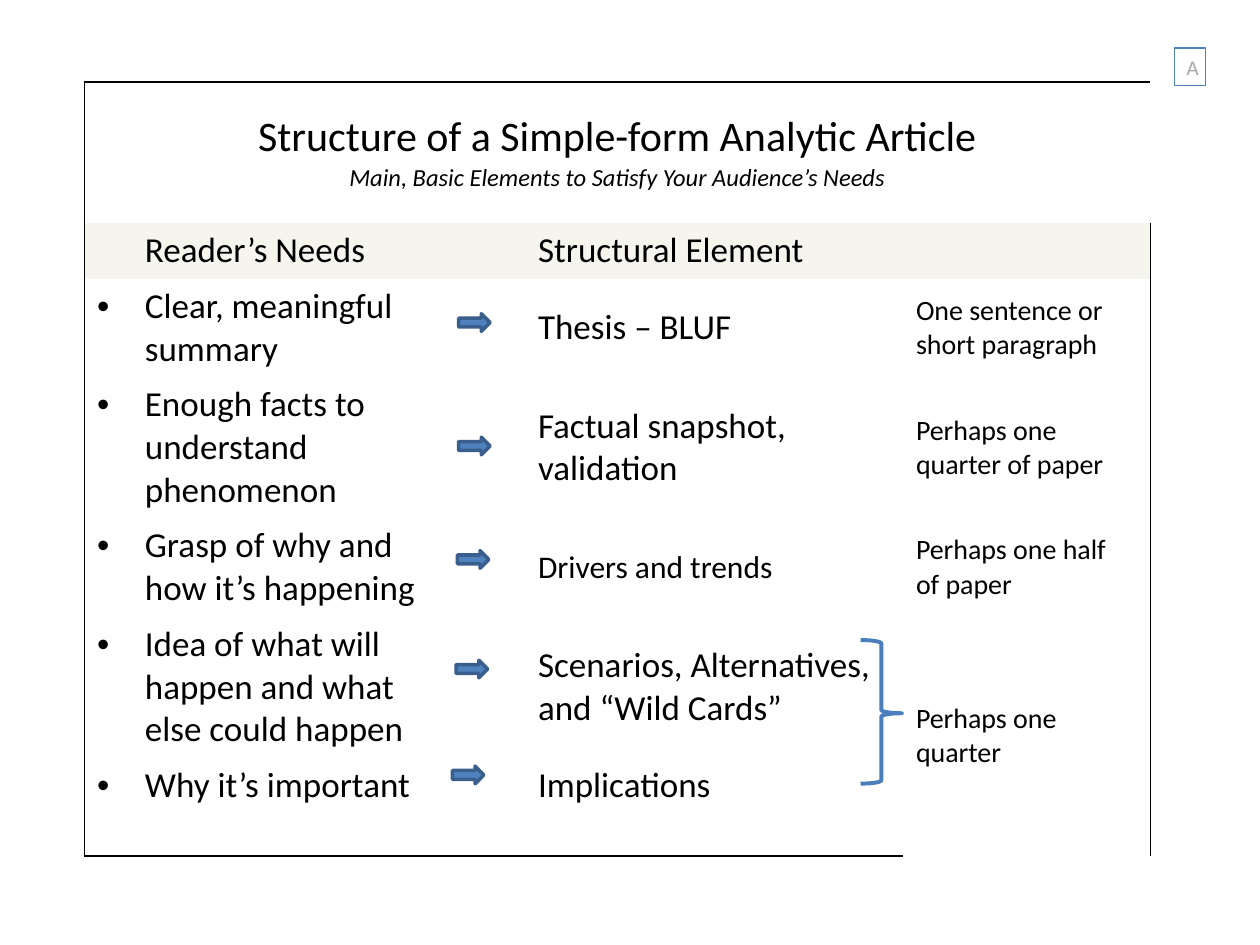
"""Build a slide that matches a reader's needs with the elements of an analytic article."""
from dataclasses import dataclass

from lxml import etree
from pptx import Presentation
from pptx import util as u
from pptx.dml.color import RGBColor
from pptx.enum import shapes, text
from pptx.oxml.ns import qn

HUES = {"ink": "000000", "band": "F5F4ED", "blue": "4F81BD", "edge": "3A5F8C",
        "brace": "4B7EBC", "grey": "A6A6A6"}
FONT = "Calibri"
WIDE, HIGH = u.Inches(10), u.Inches(7.5)
COLS = (2.75, 0.75, 3, 1.96)
LINE, PAD, HEAD = 0.34, 0.1, 1.12
STYLE = "{2D5ABB26-0587-4C30-8999-92F81FD0307C}"


@dataclass(frozen=True)
class Box:
    """Place and size in percent of the slide."""
    left: float
    top: float
    wide: float
    high: float

    def emu(self) -> tuple[int, ...]:
        return (int(WIDE * self.left / 100), int(HIGH * self.top / 100),
                int(WIDE * self.wide / 100), int(HIGH * self.high / 100))


@dataclass(frozen=True)
class Row:
    """One need, the element that meets it, and its share of the paper."""
    need: str
    item: str
    share: str
    lines: int
    size: int = 20


ROWS = (
    Row("Clear, meaningful summary", "Thesis – BLUF", "One sentence or short paragraph", 2),
    Row("Enough facts to understand phenomenon", "Factual snapshot, validation",
        "Perhaps one quarter of paper", 3),
    Row("Grasp of why and how it’s happening", "Drivers and trends",
        "Perhaps one half\vof paper", 2, 18),
    Row("Idea of what will happen and what else could happen",
        "Scenarios, Alternatives, and “Wild Cards”", "Perhaps one quarter", 3),
    Row("Why it’s important", "Implications", "", 2),
)
ARROWS = ((36.4, 33.2), (36.4, 46.27), (36.3, 58.27), (36.2, 69.87), (35.9, 81.07))


def hue(name: str) -> RGBColor:
    return RGBColor.from_string(HUES[name])


def style(para, size: float, color: str = "ink", italic: bool = False) -> None:
    font = para.font
    font.name, font.size, font.italic = FONT, u.Pt(size), italic
    font.color.rgb = hue(color)


def write(cell, words: str, size: float, top: bool = False):
    cell.vertical_anchor = text.MSO_ANCHOR.TOP if top else text.MSO_ANCHOR.MIDDLE
    para = cell.text_frame.paragraphs[0]
    para.text = words
    style(para, size)
    return para


def indent(para, bullet: bool) -> None:
    props = para._p.get_or_add_pPr()
    props.set("marL", str(u.Inches(0.38)))
    if bullet:
        props.set("indent", str(-u.Inches(0.38)))
        font = etree.Element(qn("a:buFont"), typeface="Arial")
        mark = etree.Element(qn("a:buChar"), char="•")
        props.insert(0, font)
        props.insert(1, mark)


def border(cell, sides: str) -> None:
    props = cell._tc.get_or_add_tcPr()
    for spot, side in enumerate(sides):
        line = etree.Element(qn(f"a:ln{side}"), w=str(u.Pt(1)))
        fill = etree.SubElement(line, qn("a:solidFill"))
        etree.SubElement(fill, qn("a:srgbClr"), val=HUES["ink"])
        props.insert(spot, line)


def frame(table) -> None:
    last, end = len(table.rows) - 1, len(COLS) - 1
    for y in range(last + 1):
        for x in range(end + 1):
            cell = table.cell(y, x)
            if y == 1:
                cell.fill.solid()
                cell.fill.fore_color.rgb = hue("band")
            else:
                cell.fill.background()
            tests = (("L", x == 0), ("R", x == end), ("T", y == 0), ("B", y == last))
            border(cell, "".join(side for side, hit in tests if hit))


def grid(slide) -> None:
    highs = [HEAD, LINE + PAD] + [row.lines * LINE + PAD for row in ROWS]
    spot = Box(6.7, 8.67, sum(COLS) * 10, sum(highs) / 0.075)
    table = slide.shapes.add_table(len(highs), len(COLS), *spot.emu()).table
    table.first_row = table.horz_banding = False
    table._tbl.tblPr.find(qn("a:tableStyleId")).text = STYLE
    for col, wide in zip(table.columns, COLS):
        col.width = u.Inches(wide)
    for row, high in zip(table.rows, highs):
        row.height = u.Inches(high)
    frame(table)
    table.cell(0, 0).merge(table.cell(0, 3))
    table.cell(5, 3).merge(table.cell(6, 3))

    title = table.cell(0, 0)
    main = write(title, "Structure of a Simple-form Analytic Article", 24)
    sub = title.text_frame.add_paragraph()
    sub.text = "Main, Basic Elements to Satisfy Your Audience’s Needs"
    style(sub, 14, italic=True)
    main.alignment = sub.alignment = text.PP_ALIGN.CENTER

    indent(write(table.cell(1, 0), "Reader’s Needs", 20), False)
    write(table.cell(1, 2), "Structural Element", 20)
    for y, row in enumerate(ROWS, 2):
        low = y == len(highs) - 1
        indent(write(table.cell(y, 0), row.need, 20, low), True)
        write(table.cell(y, 2), row.item, row.size, low)
        if row.share:
            write(table.cell(y, 3), row.share, 16)


def draw(slide, kind, box: Box, line: str, width: float, fill: str = ""):
    shape = slide.shapes.add_shape(kind, *box.emu())
    shape.shadow.inherit = False
    shape.line.color.rgb = hue(line)
    shape.line.width = u.Pt(width)
    if fill:
        shape.fill.solid()
        shape.fill.fore_color.rgb = hue(fill)
    else:
        shape.fill.background()
    return shape


def main() -> None:
    deck = Presentation()
    deck.slide_width, deck.slide_height = WIDE, HIGH
    slide = deck.slides.add_slide(deck.slide_layouts[6])
    grid(slide)
    kinds = shapes.MSO_SHAPE
    for left, top in ARROWS:
        draw(slide, kinds.RIGHT_ARROW, Box(left, top, 2.5, 1.87), "edge", 2, "blue")
    brace = draw(slide, kinds.RIGHT_BRACE, Box(68.3, 67.73, 3.3, 15.2), "brace", 2.25)
    brace.adjustments[0], brace.adjustments[1] = 0.08, 0.51
    tag = draw(slide, kinds.RECTANGLE, Box(93.2, 5.07, 2.5, 4), "blue", 0.75)
    tag.text_frame.word_wrap = True
    para = tag.text_frame.paragraphs[0]
    para.text = "A"
    para.alignment = text.PP_ALIGN.CENTER
    style(para, 12, "grey")
    deck.save("out.pptx")


if __name__ == "__main__":
    main()
